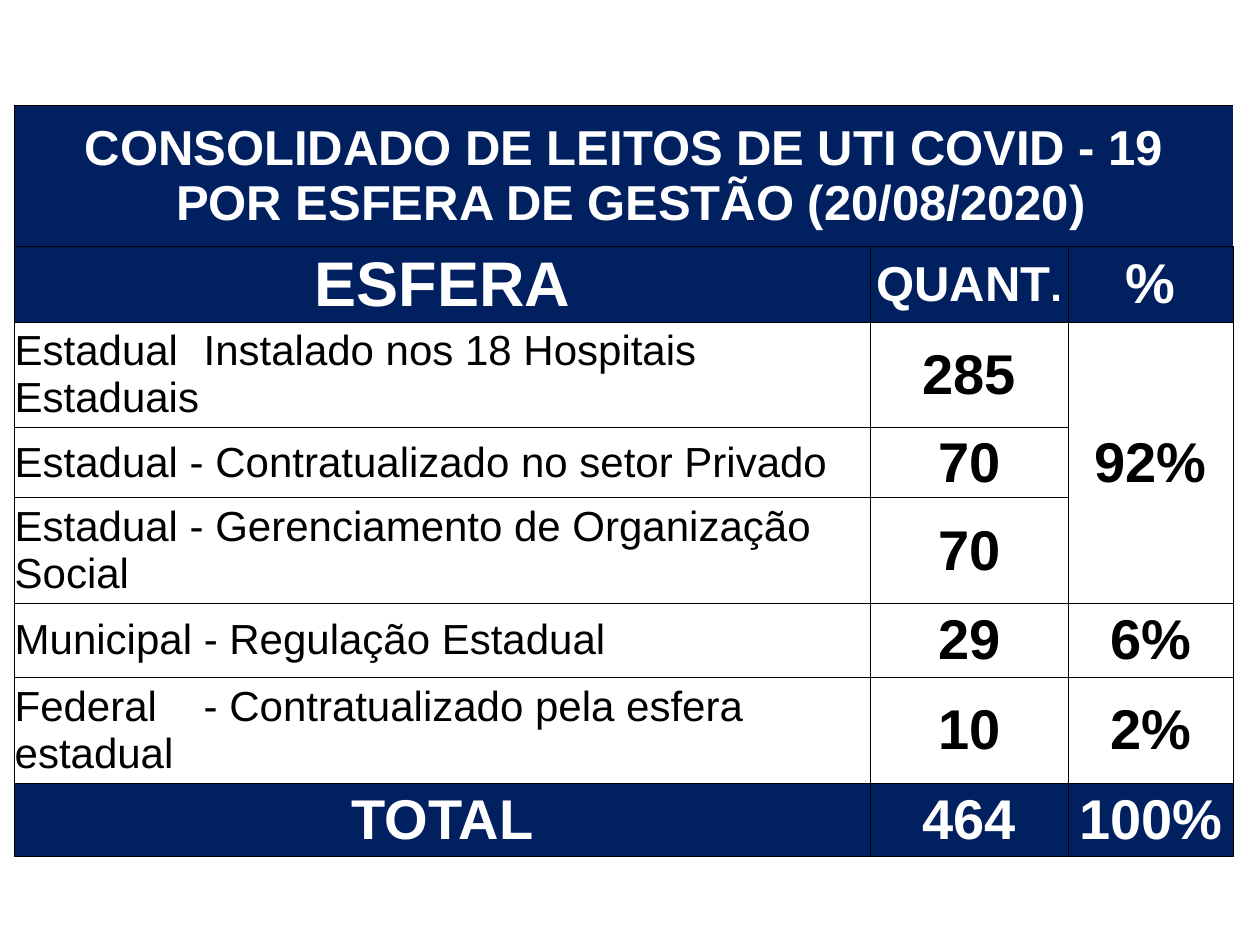
from lxml import etree
from pptx import Presentation
from pptx.dml.color import RGBColor
from pptx.enum.text import MSO_ANCHOR, PP_ALIGN
from pptx.oxml.ns import qn
from pptx.util import Pt

CENTER, LEFT = PP_ALIGN.CENTER, PP_ALIGN.LEFT
MIDDLE = MSO_ANCHOR.MIDDLE

THEME = {
    "font": "Arial", "navy": "002060", "white": "FFFFFF", "black": "000000",
    "title": 28, "heading": 36, "label": 24, "figure": 32, "border": 0.5,
}

TITLE = ["CONSOLIDADO DE LEITOS DE UTI COVID - 19",
         " POR ESFERA DE GESTÃO (20/08/2020)"]
HEADINGS = [[("ESFERA", "heading")],
            [("QUANT", "title"), (".", "label")],
            [("%", "figure")]]
SPHERES = [
    ("Estadual\tInstalado nos 18 Hospitais Estaduais", "285", "92%"),
    ("Estadual - Contratualizado no setor Privado", "70", None),
    ("Estadual - Gerenciamento de Organização Social", "70", None),
    ("Municipal - Regulação Estadual", "29", "6%"),
    ("Federal\t- Contratualizado pela esfera estadual", "10", "2%"),
]
TOTAL = ("TOTAL", "464", "100%")

SLIDE_SIZE = (720, 540)
TABLE_LEFT, TABLE_TOP = 8.4, 60.5
COLUMN_WIDTHS = [489, 113, 94.5]
ROW_HEIGHTS = [80.5, 43, 60.5, 40, 60.5, 42, 60.5, 42]
TAB_STOP = 108


def color(name):
    return RGBColor.from_string(THEME[name])


def draw_borders(cell, sides):
    properties = cell._tc.get_or_add_tcPr()
    for side in sides:
        line = etree.SubElement(properties, qn("a:ln" + side),
                                w=str(Pt(THEME["border"])))
        fill = etree.SubElement(line, qn("a:solidFill"))
        etree.SubElement(fill, qn("a:srgbClr"), val=THEME["black"])


def format_cell(cell, fill, sides="LRTB"):
    draw_borders(cell, sides)
    cell.fill.solid()
    cell.fill.fore_color.rgb = color(fill)
    cell.vertical_anchor = MIDDLE
    cell.margin_left = cell.margin_right = 0
    cell.margin_top = cell.margin_bottom = 0


def add_span(para, text, size, ink, bold=True):
    span = para.add_run()
    span.text = text
    span.font.name = THEME["font"]
    span.font.size = Pt(THEME[size])
    span.font.bold = bold
    span.font.color.rgb = color(ink)


def write_cell(cell, spans, ink, align=CENTER, bold=True):
    para = cell.text_frame.paragraphs[0]
    para.alignment = align
    for text, size in spans:
        add_span(para, text, size, ink, bold)
        if "\t" in text:
            stops = etree.SubElement(para._p.get_or_add_pPr(), qn("a:tabLst"))
            etree.SubElement(stops, qn("a:tab"), pos=str(Pt(TAB_STOP)), algn="l")


def write_title(cell):
    para = cell.text_frame.paragraphs[0]
    para.alignment = CENTER
    for index, text in enumerate(TITLE):
        if index:
            para.add_line_break()
        add_span(para, text, "title", "white")


def main():
    deck = Presentation()
    deck.slide_width, deck.slide_height = map(Pt, SLIDE_SIZE)
    page = deck.slides.add_slide(deck.slide_layouts[6])
    table = page.shapes.add_table(
        len(ROW_HEIGHTS), len(COLUMN_WIDTHS), Pt(TABLE_LEFT), Pt(TABLE_TOP),
        Pt(sum(COLUMN_WIDTHS)), Pt(sum(ROW_HEIGHTS))).table
    for column, width in zip(table.columns, COLUMN_WIDTHS):
        column.width = Pt(width)
    for row, height in zip(table.rows, ROW_HEIGHTS):
        row.height = Pt(height)

    last = len(ROW_HEIGHTS) - 1
    for number, row in enumerate(table.rows):
        fill = "navy" if number in (0, 1, last) else "white"
        for cell in row.cells:
            format_cell(cell, fill, "LTB" if number == 0 else "LRTB")
    table.cell(0, 0).merge(table.cell(0, 2))
    table.cell(2, 2).merge(table.cell(4, 2))

    write_title(table.cell(0, 0))
    for column, spans in enumerate(HEADINGS):
        write_cell(table.cell(1, column), spans, "white")
    for number, (label, *figures) in enumerate(SPHERES, 2):
        write_cell(table.cell(number, 0), [(label, "label")], "black", LEFT, False)
        for column, figure in enumerate(figures, 1):
            if figure:
                write_cell(table.cell(number, column), [(figure, "figure")], "black")
    for column, text in enumerate(TOTAL):
        write_cell(table.cell(last, column), [(text, "figure")], "white")

    deck.save("out.pptx")


if __name__ == "__main__":
    main()
